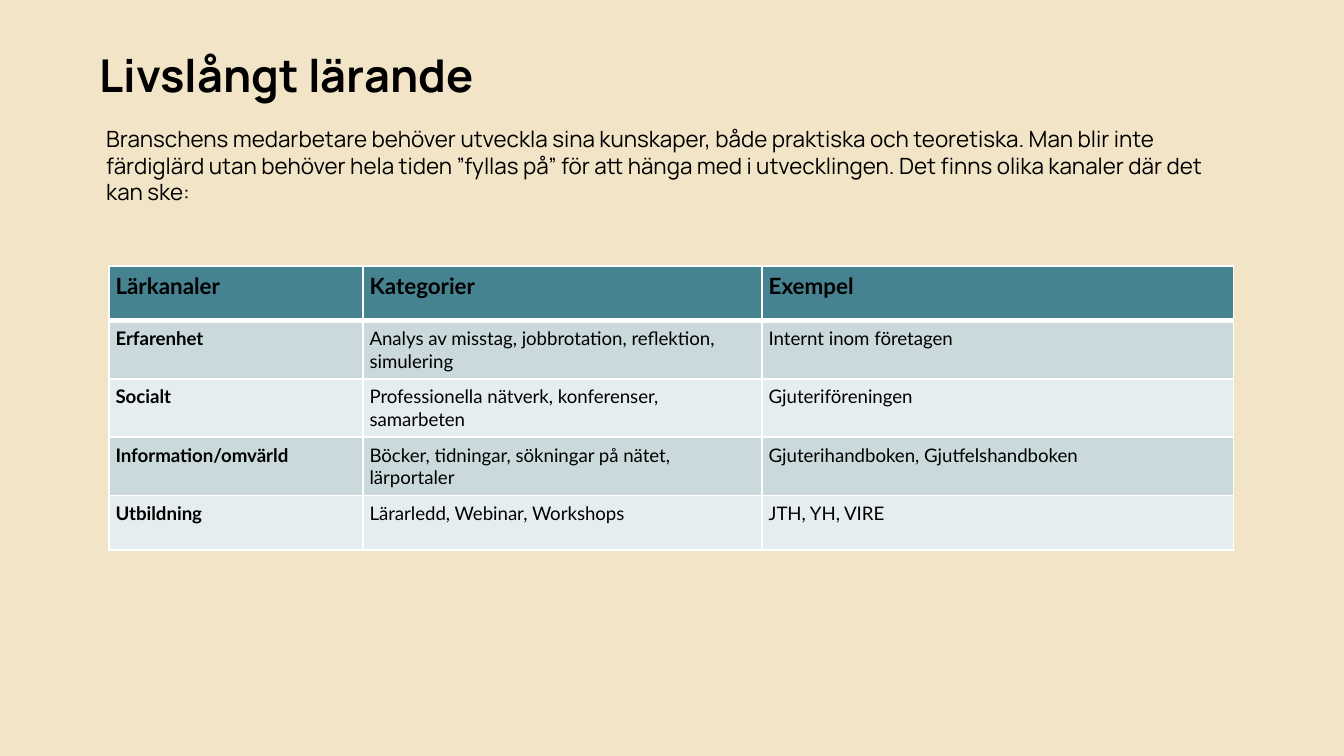
import pptx
import pptx.dml.color
import pptx.enum.text
import pptx.oxml
import pptx.oxml.ns
import pptx.util

Inches = pptx.util.Inches
Pt = pptx.util.Pt
RGBColor = pptx.dml.color.RGBColor

SAND = RGBColor(0xF2, 0xE4, 0xC6)
TEAL = RGBColor(0x45, 0x83, 0x91)
BAND_DARK = RGBColor(0xCA, 0xDA, 0xDC)
BAND_LIGHT = RGBColor(0xE6, 0xED, 0xEE)
BLACK = RGBColor(0, 0, 0)
WHITE = RGBColor(0xFF, 0xFF, 0xFF)


def write_text(frame, text, size, font_name, bold, line_spacing=None):
    """Fill a text frame with one left-aligned paragraph."""
    frame.text = text
    frame.word_wrap = True
    paragraph = frame.paragraphs[0]
    paragraph.alignment = pptx.enum.text.PP_ALIGN.LEFT
    paragraph.line_spacing = line_spacing
    font = paragraph.runs[0].font
    for attribute, value in {"size": Pt(size), "name": font_name, "bold": bold}.items():
        setattr(font, attribute, value)
    font.color.rgb = BLACK


def set_borders(cell, widths):
    """Draw white cell borders; widths run left, right, top, bottom in points."""
    properties = cell._tc.get_or_add_tcPr()
    for index, (side, width) in enumerate(zip("LRTB", widths)):
        properties.insert(index, pptx.oxml.parse_xml(
            f'<a:ln{side} {pptx.oxml.ns.nsdecls("a")} w="{Pt(width)}">'
            f'<a:solidFill><a:srgbClr val="{WHITE}"/></a:solidFill></a:ln{side}>'))


presentation = pptx.Presentation()
presentation.slide_width = Inches(10)
presentation.slide_height = Inches(10) * 9 // 16
slide = presentation.slides.add_slide(presentation.slide_layouts[5])
slide.background.fill.solid()
slide.background.fill.fore_color.rgb = SAND

inset = Inches(0.05)
margins = {f"margin_{side}": inset for side in ("left", "top", "right", "bottom")}

# Title
heading = slide.shapes.title
heading_format = {"left": Inches(0.69), "top": Inches(0.3),
                  "width": Inches(8.62), "height": Inches(0.56)}
for attribute, value in heading_format.items():
    setattr(heading, attribute, value)
write_text(heading.text_frame, "Livslångt lärande", 24.2, "Manrope", True, 0.9)
heading.text_frame.vertical_anchor = pptx.enum.text.MSO_ANCHOR.MIDDLE

# Learning channels table
rows = [
    ("Lärkanaler", "Kategorier", "Exempel"),
    ("Erfarenhet", "Analys av misstag, jobbrotation, reflektion, simulering",
     "Internt inom företagen"),
    ("Socialt", "Professionella nätverk, konferenser, samarbeten",
     "Gjuteriföreningen"),
    ("Information/omvärld", "Böcker, tidningar, sökningar på nätet, lärportaler",
     "Gjuterihandboken, Gjutfelshandboken"),
    ("Utbildning", "Lärarledd, Webinar, Workshops", "JTH, YH, VIRE"),
]
channels = slide.shapes.add_table(len(rows), 3, Inches(0.81), Inches(1.98),
                                  Inches(8.37), Inches(2.03)).table
for column, width in zip(channels.columns, (1.89, 2.97, 3.51)):
    column.width = Inches(width)

for row_index, row in enumerate(rows):
    is_header = row_index == 0
    band = TEAL if is_header else BAND_DARK if row_index % 2 else BAND_LIGHT
    top_width = 3 if row_index == 1 else 1
    bottom_width = 3 if is_header else 1
    for column_index, text in enumerate(row):
        cell = channels.cell(row_index, column_index)
        write_text(cell.text_frame, text, 12 if is_header else 10, "Lato",
                   is_header or column_index == 0)
        for attribute, value in margins.items():
            setattr(cell, attribute, value)
        cell.fill.solid()
        cell.fill.fore_color.rgb = band
        set_borders(cell, (1, 1, top_width, bottom_width))

# Introduction
introduction = slide.shapes.add_textbox(Inches(0.74), Inches(0.88),
                                        Inches(8.55), Inches(0.83))
write_text(introduction.text_frame,
           "Branschens medarbetare behöver utveckla sina kunskaper, både praktiska "
           "och teoretiska. Man blir inte färdiglärd utan behöver hela tiden "
           "”fyllas på” för att hänga med i utvecklingen. Det finns olika kanaler "
           "där det kan ske:", 12, "Manrope", False)
introduction.text_frame.auto_size = pptx.enum.text.MSO_AUTO_SIZE.SHAPE_TO_FIT_TEXT

for frame in (heading.text_frame, introduction.text_frame):
    for attribute, value in margins.items():
        setattr(frame, attribute, value)

presentation.save("out.pptx")
